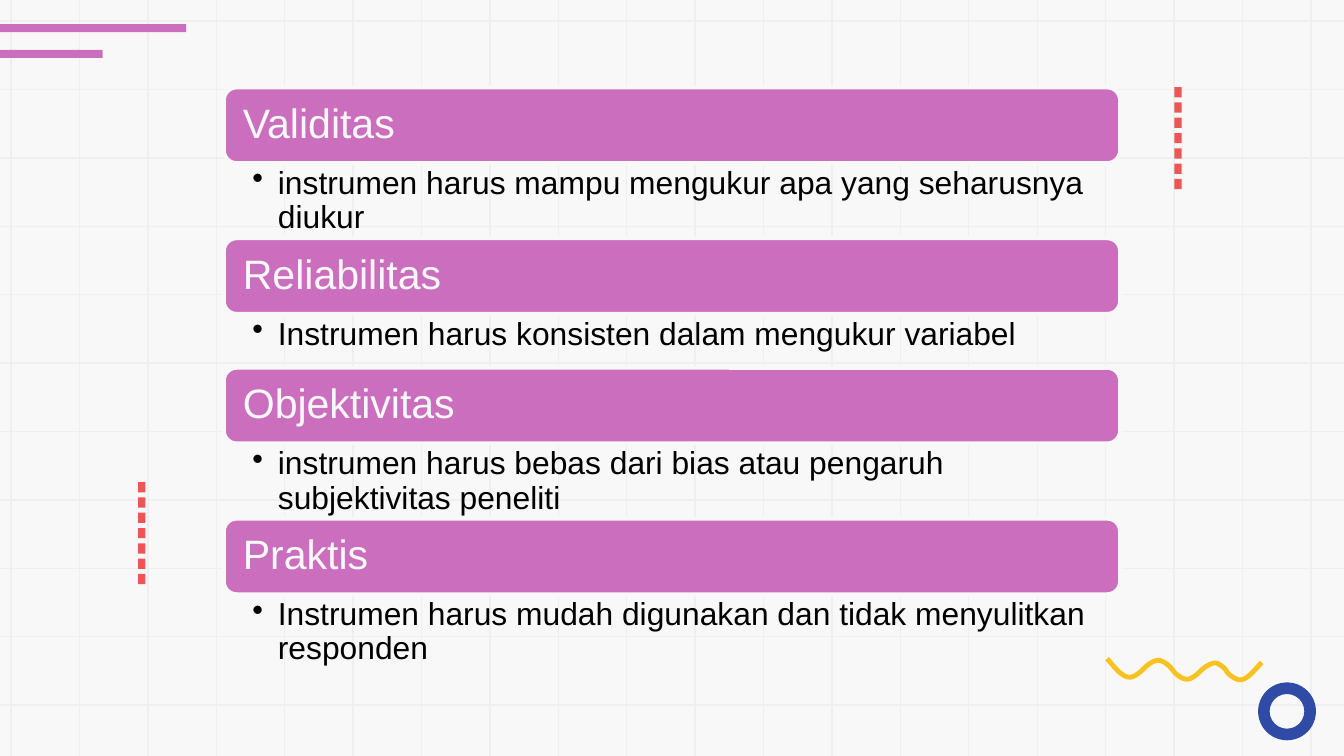
import math
import pptx
import pptx.util
import pptx.dml.color
import pptx.enum.shapes
import pptx.enum.text
import pptx.oxml.ns
import lxml.etree

Pt = pptx.util.Pt
KIND = pptx.enum.shapes.MSO_SHAPE
ANCHOR = pptx.enum.text.MSO_ANCHOR
ALIGN = pptx.enum.text.PP_ALIGN
WIDE, HIGH = 720, 405
HUES = {
    "paper": "F8F8F8",
    "grid": "EFEFEF",
    "pink": "CB6EBE",
    "blue": "304BA6",
    "gold": "F8C220",
    "red": "F05555",
    "ink": "000000",
}
HEAD = {
    "frame": {"margin_left": Pt(8.2), "margin_right": Pt(8.2), "margin_top": Pt(6.5),
              "margin_bottom": Pt(6.5), "vertical_anchor": ANCHOR.MIDDLE, "word_wrap": True},
    "para": {"alignment": ALIGN.LEFT, "line_spacing": 0.9},
    "font": {"name": "Arial", "size": Pt(22)},
    "hue": "paper",
}
BODY = {
    "frame": {"margin_left": Pt(15.2), "margin_right": Pt(12.2), "margin_top": Pt(2.2),
              "margin_bottom": Pt(2.2), "vertical_anchor": ANCHOR.TOP, "word_wrap": True},
    "para": {"alignment": ALIGN.LEFT, "line_spacing": 0.9, "level": 1},
    "font": {"name": "Arial", "size": Pt(17)},
    "hue": "ink",
}
ITEMS = [
    ("Validitas", "instrumen harus mampu mengukur apa yang seharusnya diukur", 40.4),
    ("Reliabilitas", "Instrumen harus konsisten dalam mengukur variabel", 29),
    ("Objektivitas", "instrumen harus bebas dari bias atau pengaruh subjektivitas peneliti", 40.4),
    ("Praktis", "Instrumen harus mudah digunakan dan tidak menyulitkan responden", 40.4),
]
WAVE = [
    (1.1, 0.9), (7.9, 8.3), (13, 10.8), (17.6, 9), (23.8, 3.6), (28.8, 1.8),
    (33.8, 4.3), (38.5, 9.4), (43.6, 11.9), (48.2, 10.1), (53.6, 5.4), (59, 3.2),
    (63.7, 5.8), (66.6, 9.4), (72, 12.2), (77, 10.1), (83.9, 2.9),
]


def rgb(hue):
    return pptx.dml.color.RGBColor.from_string(HUES[hue])


def apply(thing, values):
    for name, value in values.items():
        setattr(thing, name, value)


def paint(shape, hue):
    shape.shadow.inherit = False
    shape.fill.solid()
    shape.fill.fore_color.rgb = rgb(hue)
    shape.line.fill.background()
    return shape


def block(slide, kind, box, hue):
    return paint(slide.shapes.add_shape(kind, *map(Pt, box)), hue)


def write(shape, words, style):
    frame = shape.text_frame
    apply(frame, style["frame"])
    para = frame.paragraphs[0]
    apply(para, style["para"])
    run = para.add_run()
    run.text = words
    apply(run.font, style["font"])
    run.font.color.rgb = rgb(style["hue"])
    return para


def bullet(para, indent):
    props = para._p.get_or_add_pPr()
    props.set("marL", str(Pt(indent)))
    props.set("indent", str(-Pt(indent)))
    mark = lxml.etree.SubElement(props, pptx.oxml.ns.qn("a:buChar"))
    mark.set("char", "•")


def rule(slide, start, end):
    kind = pptx.enum.shapes.MSO_CONNECTOR.STRAIGHT
    line = slide.shapes.add_connector(kind, *map(Pt, start + end))
    line.line.color.rgb = rgb("grid")
    line.line.width = Pt(0.75)
    lxml.etree.SubElement(line._element.spPr, pptx.oxml.ns.qn("a:effectLst"))


def grid(slide, box):
    left, top, width, height = box
    step = 36.65
    for i in range(11):
        y = top + 11.3 + i * step
        rule(slide, (left, y), (left + width, y))
    for i in range(20):
        x = left + 5.9 + i * step
        rule(slide, (x, top), (x, top + height))


def stripes(slide, box):
    left, top, width, height = box
    thick = 4.3
    block(slide, KIND.RECTANGLE, (left, top, width, thick), "pink")
    block(slide, KIND.RECTANGLE, (left, top + height - thick, 55, thick), "pink")


def ring(slide, box):
    block(slide, KIND.DONUT, box, "blue").adjustments[0] = 0.2


def curve(points, count=6):
    ends = [points[0]] + points + [points[-1]]
    for a, b, c, d in zip(ends, ends[1:], ends[2:], ends[3:]):
        for i in range(count):
            t = i / count
            yield tuple(
                q + t * (r - p) / 2 + t**2 * (2*p - 5*q + 4*r - s) / 2
                + t**3 * (3*q - p - 3*r + s) / 2
                for p, q, r, s in zip(a, b, c, d))
    yield points[-1]


def wave(slide, box):
    left, top, half = box[0], box[1], 1.3
    path = list(curve(WAVE))
    over, under = [], []
    for i, (x, y) in enumerate(path):
        back, ahead = path[max(i - 1, 0)], path[min(i + 1, len(path) - 1)]
        dx, dy = ahead[0] - back[0], ahead[1] - back[1]
        size = math.hypot(dx, dy)
        for side, sign in ((over, 1), (under, -1)):
            side.append((Pt(left + x + sign * half * dy / size),
                         Pt(top + y - sign * half * dx / size)))
    edge = over + under[::-1]
    pen = slide.shapes.build_freeform(*edge[0])
    pen.add_line_segments(edge[1:], close=True)
    paint(pen.convert_to_shape(), "gold")


def dashes(slide, box):
    left, top, width, height = box
    count, dash = 7, 5.5
    step = (height - dash) / (count - 1)
    for i in range(count):
        block(slide, KIND.RECTANGLE, (left, top + i * step, width, dash), "red")


def panel(slide, box):
    left, top, width, _ = box
    tall = 40.4
    for title, detail, depth in ITEMS:
        bar = block(slide, KIND.ROUNDED_RECTANGLE, (left, top, width, tall), "pink")
        bar.line.color.rgb = rgb("paper")
        bar.line.width = Pt(2)
        write(bar, title, HEAD)
        top += tall
        note = slide.shapes.add_textbox(*map(Pt, (left, top, width, depth)))
        bullet(write(note, detail, BODY), 13.7)
        top += depth


def main():
    deck = pptx.Presentation()
    deck.slide_width, deck.slide_height = Pt(WIDE), Pt(HIGH)
    slide = deck.slides.add_slide(deck.slide_layouts[6])
    slide.background.fill.solid()
    slide.background.fill.fore_color.rgb = rgb("paper")
    grid(slide, (0, 0, WIDE, HIGH))
    stripes(slide, (0, 12.9, 99.7, 18.2))
    ring(slide, (674, 365.6, 31, 31))
    wave(slide, (592, 352, 84.2, 13.7))
    panel(slide, (120, 46.9, 480, 311.8))
    dashes(slide, (74, 258.3, 3.9, 54.7))
    dashes(slide, (629.2, 46.7, 3.9, 54.7))
    deck.save("out.pptx")


if __name__ == "__main__":
    main()
